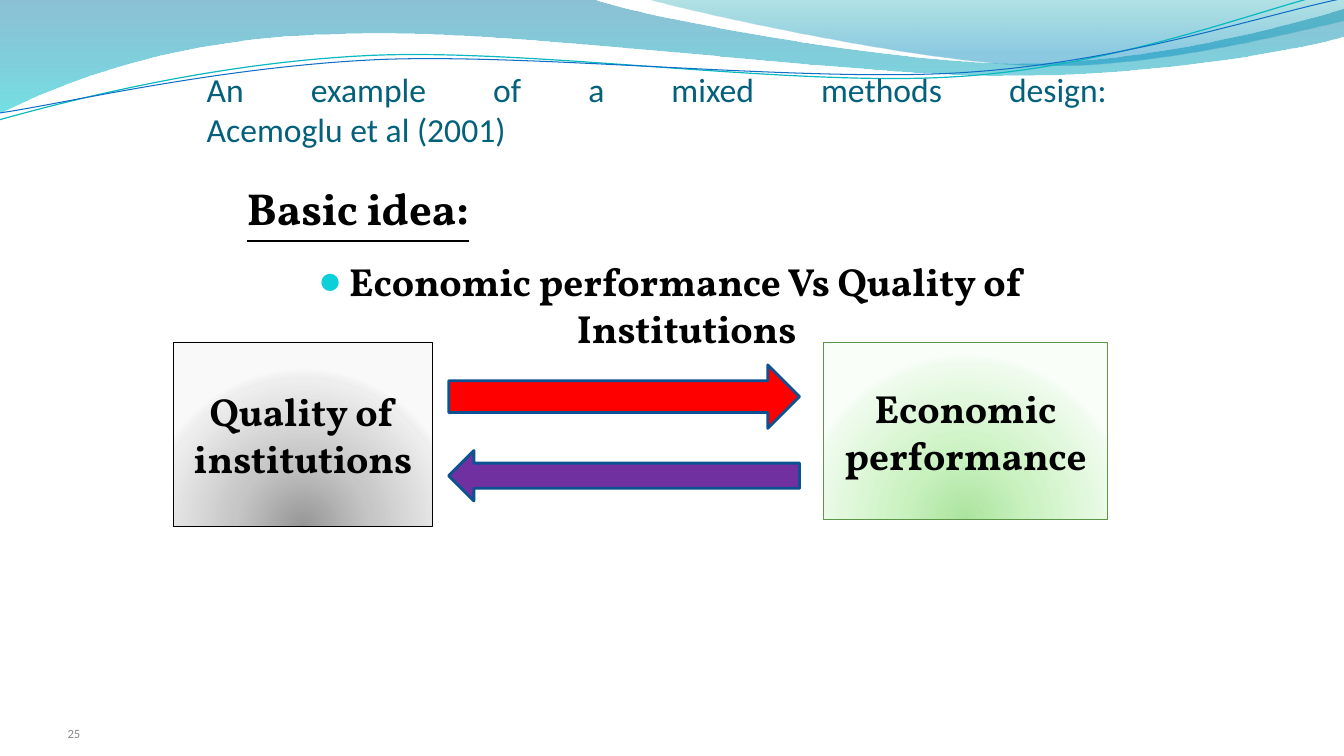
from dataclasses import dataclass
from math import cos, radians, sin
from typing import Optional

from pptx import Presentation
from pptx import util as u
from pptx.dml.color import RGBColor
from pptx.enum import shapes, text
from pptx.oxml import parse_xml
from pptx.oxml.ns import nsdecls, qn

COLORS = {
    "title": "04617B", "text": "000000", "number": "898989", "bullet": "0BD0D9",
    "teal": "0AB8BF", "blue": "0F6FC6", "arrow_line": "0B5292",
    "red": "FF0000", "purple": "7030A0", "green_line": "5B9747",
}
SERIF, SANS = "Vollkorn", "Calibri"
LINEAR = '<a:lin ang="5400000" scaled="0"/>'
RADIAL = ('<a:path path="circle"><a:fillToRect l="50000" t="130000" r="50000" b="-30000"/>'
          '</a:path>')
TILT = -2.7  # degrees, for the two thin header lines
TILT_CENTER = (6.66, 0.57)

Stop = tuple[int, str, int]  # position %, colour, opacity %
Point = tuple[float, float]


@dataclass
class Wave:
    start: Point
    segments: list[tuple[float, ...]]  # two numbers: line; six: cubic curve
    stops: Optional[list[Stop]] = None
    line: str = ""
    width: float = 0


@dataclass
class Box:
    label: str
    left: float
    width: float
    height: float
    stops: list[Stop]
    line: str


@dataclass
class Arrow:
    kind: shapes.MSO_SHAPE
    top: float
    height: float
    fill: str


WAVES = [
    Wave((0, 0), [(5.87, -0.01), (6.34, 0.17, 8.85, 0.63, 10.11, 0.63),
                  (11.38, 0.63, 12.78, 0.26, 13.33, 0.09), (13.35, 0.36),
                  (13.11, 0.44, 11.6, 0.76, 9.94, 0.75), (8.29, 0.75, 5.09, 0.28, 3.43, 0.34),
                  (1.72, 0.36, 0.61, 0.83, -0.01, 1.13)],
         stops=[(0, "0074A1", 45), (100, "00C6CF", 55)]),
    Wave((6.39, -0.01), [(6.79, 0.11, 9.09, 0.62, 10.25, 0.65),
                         (11.41, 0.69, 12.82, 0.32, 13.33, 0.21), (13.33, 0)],
         stops=[(0, "00A1A9", 30), (80, "008BBF", 45)]),
    Wave((-0.01, 1.19), [(0.64, 1.01, 2.11, 0.62, 3.69, 0.55), (5.27, 0.48, 7.9, 0.87, 9.5, 0.76),
                         (11.1, 0.66, 12.52, 0.08, 13.31, -0.1)],
         line="teal", width=0.85),
    Wave((0, 1.12), [(0.63, 1.03, 2.18, 0.66, 3.78, 0.59), (5.37, 0.53, 7.96, 0.82, 9.55, 0.72),
                     (11.15, 0.62, 12.55, 0.14, 13.34, -0.02)],
         line="blue", width=0.75),
]
BOXES = [
    Box("Quality of institutions", 1.72, 2.57, 1.82,
        [(0, "979797", 100), (43, "C6C6C6", 100), (93, "EEEEEE", 100), (100, "F9F9F9", 100)],
        "text"),
    Box("Economic performance", 8.17, 2.81, 1.75,
        [(0, "ACE49F", 100), (43, "CDF3C4", 100), (93, "EFFBED", 100), (100, "F9FFF8", 100)],
        "green_line"),
]
ARROWS = [
    Arrow(shapes.MSO_SHAPE.RIGHT_ARROW, 3.62, 0.63, "red"),
    Arrow(shapes.MSO_SHAPE.LEFT_ARROW, 4.47, 0.5, "purple"),
]


def rgb(name: str) -> RGBColor:
    return RGBColor.from_string(COLORS[name])


def set_font(p, size: float, face: str, color: str, bold: bool = False) -> None:
    p.font.size, p.font.name, p.font.bold = u.Pt(size), face, bold
    p.font.color.rgb = rgb(color)


def set_line(sp, color: str, width: float) -> None:
    sp.line.color.rgb, sp.line.width = rgb(color), u.Pt(width)


def set_gradient(sp, stops: list[Stop], direction: str) -> None:
    gs = "".join(f'<a:gs pos="{pos * 1000}"><a:srgbClr val="{color}">'
                 f'<a:alpha val="{alpha * 1000}"/></a:srgbClr></a:gs>'
                 for pos, color, alpha in stops)
    sp.fill.background()
    old = sp.element.spPr.find(qn("a:noFill"))
    old.getparent().replace(old, parse_xml(
        f'<a:gradFill {nsdecls("a")} rotWithShape="1"><a:gsLst>{gs}</a:gsLst>{direction}</a:gradFill>'))


def to_emu(x: float, y: float, tilt: float) -> tuple[int, int]:
    """Place a point in the frame of a shape that is turned by tilt."""
    cx, cy = TILT_CENTER
    dx, dy, a = x - cx, y - cy, radians(-tilt)
    return (u.Inches(cx + dx * cos(a) - dy * sin(a)), u.Inches(cy + dx * sin(a) + dy * cos(a)))


def add_wave(s, wave: Wave) -> None:
    tilt = 0 if wave.stops else TILT
    chains = [[to_emu(seg[i], seg[i + 1], tilt) for i in range(0, len(seg), 2)]
              for seg in wave.segments]
    builder = s.shapes.build_freeform(*to_emu(*wave.start, tilt))
    builder.add_line_segments([chain[-1] for chain in chains], close=wave.stops is not None)
    sp = builder.convert_to_shape()
    # Bend the sides that have control points
    for side, chain in zip(list(sp.element.iter(qn("a:lnTo"))), chains):
        if len(chain) == 3:
            pts = "".join(f'<a:pt x="{x - sp.left}" y="{y - sp.top}"/>' for x, y in chain)
            side.getparent().replace(side, parse_xml(
                f'<a:cubicBezTo {nsdecls("a")}>{pts}</a:cubicBezTo>'))
    sp.rotation = tilt
    sp.shadow.inherit = False
    if wave.stops:
        set_gradient(sp, wave.stops, LINEAR)
        sp.line.fill.background()
    else:
        sp.fill.background()
        set_line(sp, wave.line, wave.width)


def add_box(s, box: Box) -> None:
    sp = s.shapes.add_shape(shapes.MSO_SHAPE.RECTANGLE, u.Inches(box.left), u.Inches(3.4),
                            u.Inches(box.width), u.Inches(box.height))
    set_gradient(sp, box.stops, RADIAL)
    set_line(sp, box.line, 0.75)
    sp.shadow.inherit = False
    tf = sp.text_frame
    tf.word_wrap, tf.vertical_anchor = True, text.MSO_ANCHOR.MIDDLE
    p = tf.paragraphs[0]
    p.text, p.alignment = box.label, text.PP_ALIGN.CENTER
    set_font(p, 28, SERIF, "text", bold=True)


def add_arrow(s, arrow: Arrow) -> None:
    sp = s.shapes.add_shape(arrow.kind, u.Inches(4.45), u.Inches(arrow.top),
                            u.Inches(3.48), u.Inches(arrow.height))
    sp.shadow.inherit = False
    sp.fill.solid()
    sp.fill.fore_color.rgb = rgb(arrow.fill)
    set_line(sp, "arrow_line", 2)


def add_text_frame(s, left: float, top: float, width: float, height: float):
    tf = s.shapes.add_textbox(u.Inches(left), u.Inches(top),
                              u.Inches(width), u.Inches(height)).text_frame
    tf.word_wrap = True
    return tf


def add_title(s) -> None:
    title = s.shapes.title
    title.left, title.top = u.Inches(2.05), u.Inches(0.39)
    title.width, title.height = u.Inches(8.93), u.Inches(1.09)
    title.element.getparent().append(title.element)  # in front of the waves
    tf = title.text_frame
    tf.auto_size, tf.vertical_anchor = text.MSO_AUTO_SIZE.NONE, text.MSO_ANCHOR.BOTTOM
    tf.margin_left = tf.margin_right = tf.margin_bottom = 0
    p = tf.paragraphs[0]
    p.text = "An example of a mixed methods design:\vAcemoglu et al (2001)"
    p.alignment = text.PP_ALIGN.JUSTIFY
    set_font(p, 24, SANS, "title")


def add_body(s) -> None:
    tf = add_text_frame(s, 2.35, 1.74, 8.62, 4.76)
    p = tf.paragraphs[0]
    p.text = "Basic idea:"
    set_font(p, 32, SERIF, "text", bold=True)
    p.font.underline = True
    p = tf.add_paragraph()
    p.text, p.alignment = "Economic performance Vs Quality of Institutions", text.PP_ALIGN.CENTER
    p.space_before = u.Pt(16.5)
    set_font(p, 28, SERIF, "text", bold=True)
    pPr = p._p.get_or_add_pPr()
    pPr.set("marL", str(u.Inches(0.3)))
    pPr.set("indent", str(u.Inches(-0.3)))
    bullet = (f'<a:buClr {nsdecls("a")}><a:srgbClr val="{COLORS["bullet"]}"/></a:buClr>',
              f'<a:buSzPct {nsdecls("a")} val="95000"/>',
              f'<a:buFont {nsdecls("a")} typeface="{SANS}"/>',
              f'<a:buChar {nsdecls("a")} char="●"/>')
    for part in bullet:
        pPr.find(qn("a:defRPr")).addprevious(parse_xml(part))


def add_slide_number(s) -> None:
    tf = add_text_frame(s, 0.67, 6.95, 3.11, 0.4)
    tf.margin_left = tf.margin_right = tf.margin_top = tf.margin_bottom = 0
    tf.vertical_anchor = text.MSO_ANCHOR.BOTTOM
    p = tf.paragraphs[0]
    p.text = "25"
    set_font(p, 9, SANS, "number")


def main() -> None:
    prs = Presentation()
    prs.slide_width, prs.slide_height = u.Inches(13.33), u.Inches(7.5)
    s = prs.slides.add_slide(prs.slide_layouts[5])
    # Wavy header
    for wave in WAVES:
        add_wave(s, wave)
    # Title and text
    add_title(s)
    add_body(s)
    # Two-way relation
    for box in BOXES:
        add_box(s, box)
    for arrow in ARROWS:
        add_arrow(s, arrow)
    add_slide_number(s)
    prs.save("out.pptx")


if __name__ == "__main__":
    main()
